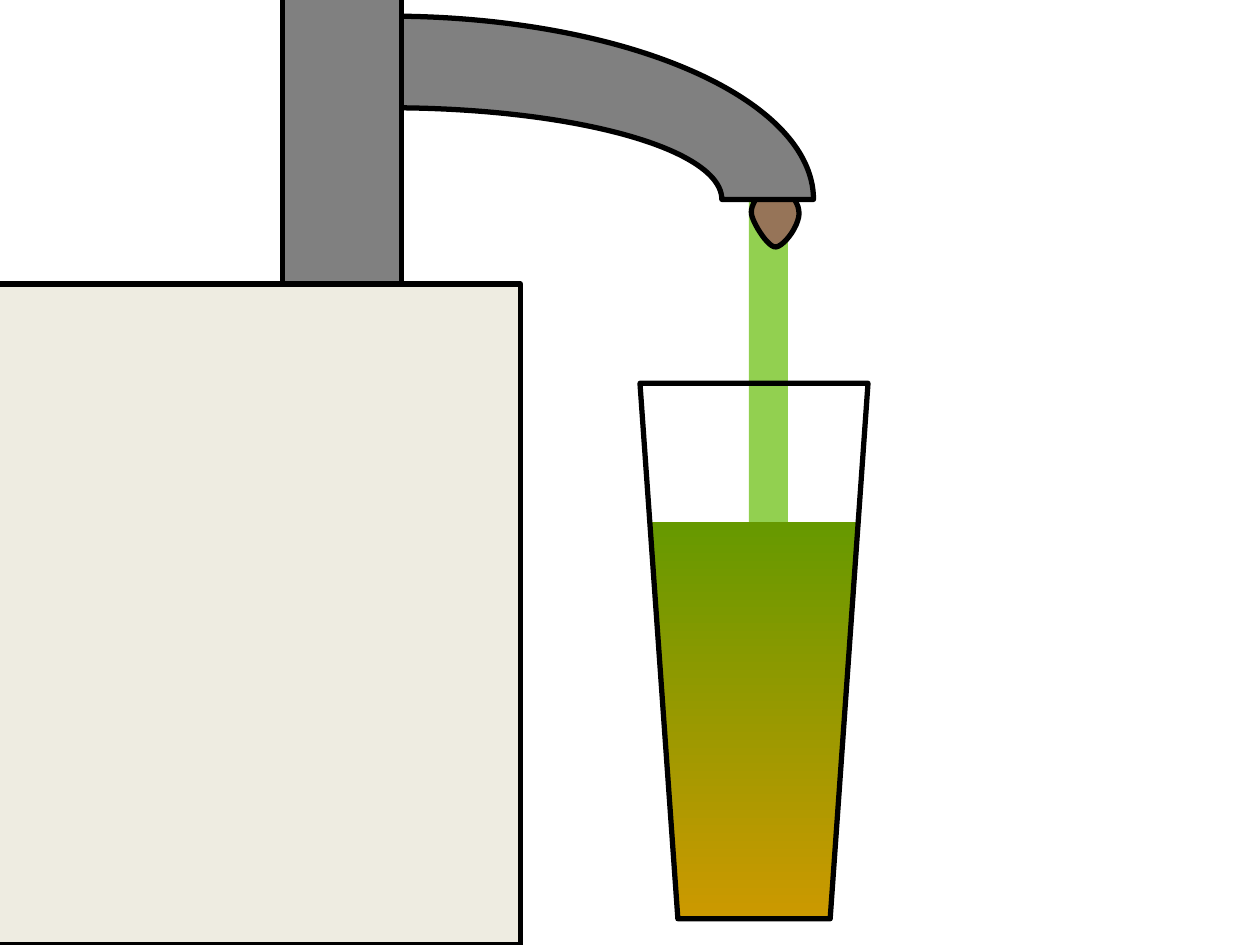
from dataclasses import dataclass
from typing import Optional

from pptx import Presentation
from pptx.dml.color import RGBColor
from pptx.enum.shapes import MSO_SHAPE
from pptx.util import Pt

RECT = MSO_SHAPE.RECTANGLE
TAPER = MSO_SHAPE.TRAPEZOID
ARC = MSO_SHAPE.BLOCK_ARC

BLACK = RGBColor(0x00, 0x00, 0x00)
GRAY = RGBColor(0x80, 0x80, 0x80)
CREAM = RGBColor(0xEE, 0xEC, 0xE1)
BROWN = RGBColor(0x96, 0x74, 0x58)
LIME = RGBColor(0x92, 0xD0, 0x50)
GREEN = RGBColor(0x66, 0x99, 0x00)
AMBER = RGBColor(0xCC, 0x99, 0x00)

STEPS = 12
DROP_START = (434.16, 108)
DROP_CURVES = (
    ((433.44, 113.04), (427.68, 118.08), (429.84, 123.84)),
    ((431.28, 128.88), (439.2, 141.84), (443.52, 141.12)),
    ((448.56, 140.4), (457.92, 127.44), (456.48, 120.24)),
    ((455.76, 112.32), (441.36, 98.64), (437.04, 96.48)),
    ((432.72, 94.32), (435.6, 103.68), DROP_START),
)


@dataclass(frozen=True)
class Part:
    kind: MSO_SHAPE
    left: float
    top: float
    width: float
    height: float
    fills: tuple[RGBColor, ...] = ()
    edge: Optional[RGBColor] = BLACK
    turn: float = 0
    adjust: tuple[float, ...] = ()


STREAM = Part(RECT, 427.9, 100, 22.4, 425.5, (LIME,), None)
FRONT = (
    Part(TAPER, 371.8, 298.2, 118.6, 226.8, (GREEN, AMBER), None, 180, (0.136,)),
    Part(TAPER, 365.7, 219, 130.3, 306, (), BLACK, 180, (0.166,)),
    Part(ARC, -20, 9.2, 484.9, 209.5, (GRAY,), adjust=(161.695, 0, 0.25)),
    Part(RECT, 161.5, -19.4, 68.1, 181.6, (GRAY,)),
    Part(RECT, -20, 162.3, 317.5, 377.5, (CREAM,)),
)


def paint(shape, fills: tuple[RGBColor, ...], edge: Optional[RGBColor]) -> None:
    shape.shadow.inherit = False
    if len(fills) > 1:
        shape.fill.gradient()
        shape.fill.gradient_angle = 90
        for stop, color in zip(shape.fill.gradient_stops, fills):
            stop.color.rgb = color
    elif fills:
        shape.fill.solid()
        shape.fill.fore_color.rgb = fills[0]
    else:
        shape.fill.background()
    if edge is None:
        shape.line.fill.background()
    else:
        shape.line.color.rgb = edge
        shape.line.width = Pt(3)


def draw_part(slide, part: Part) -> None:
    shape = slide.shapes.add_shape(
        part.kind, Pt(part.left), Pt(part.top), Pt(part.width), Pt(part.height)
    )
    shape.rotation = part.turn
    for index, value in enumerate(part.adjust):
        shape.adjustments[index] = value
    paint(shape, part.fills, part.edge)


def bend(knots: tuple, t: float) -> tuple[int, int]:
    s = 1 - t
    weights = (s**3, 3 * s * s * t, 3 * s * t * t, t**3)
    x, y = (sum(w * k[axis] for w, k in zip(weights, knots)) for axis in (0, 1))
    return Pt(x), Pt(y)


def draw_drop(slide) -> None:
    points = []
    start = DROP_START
    for curve in DROP_CURVES:
        points += [bend((start, *curve), n / STEPS) for n in range(1, STEPS + 1)]
        start = curve[-1]
    pen = slide.shapes.build_freeform(Pt(DROP_START[0]), Pt(DROP_START[1]))
    pen.add_line_segments(points, close=True)
    paint(pen.convert_to_shape(), (BROWN,), BLACK)


def main() -> None:
    """Draw a tap on a barrel filling a glass with a graded liquid."""
    deck = Presentation()
    deck.slide_width, deck.slide_height = Pt(720), Pt(540)
    slide = deck.slides.add_slide(deck.slide_layouts[6])
    draw_part(slide, STREAM)
    draw_drop(slide)
    for part in FRONT:
        draw_part(slide, part)
    deck.save("out.pptx")


if __name__ == "__main__":
    main()
